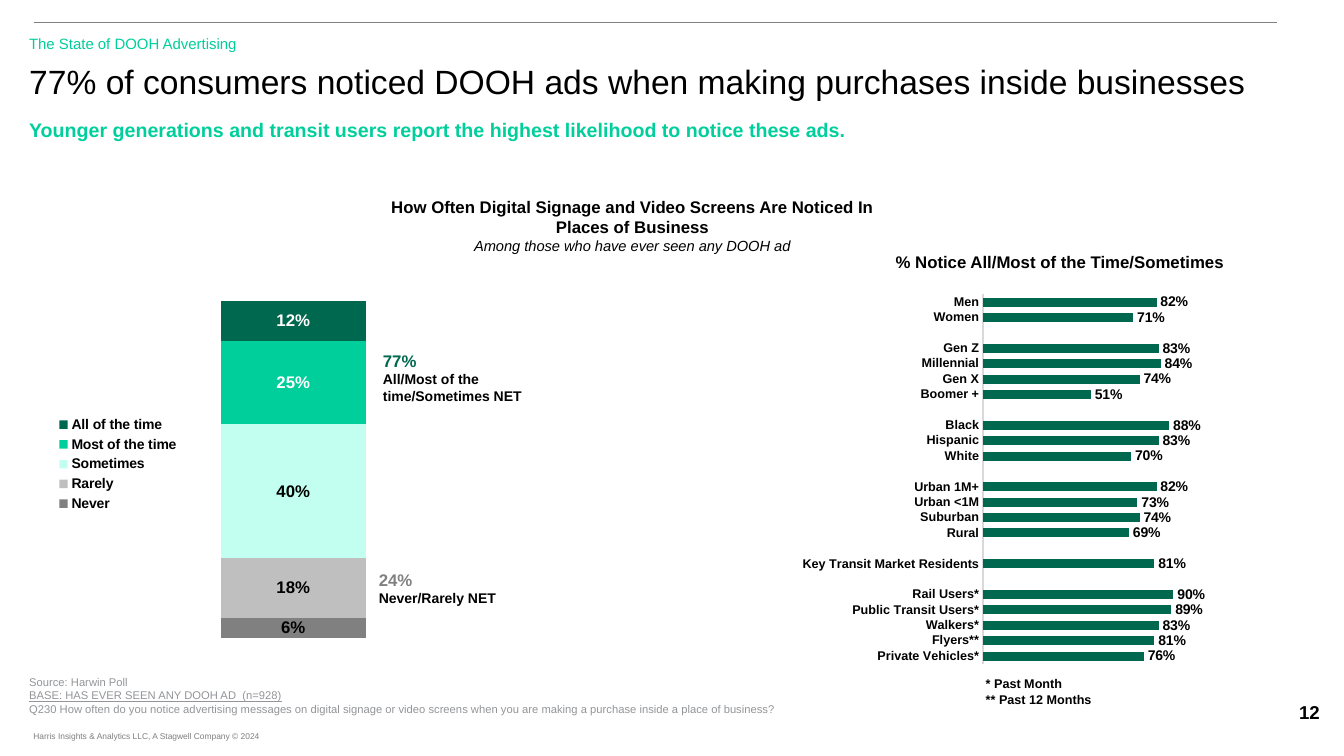
import pptx
import pptx.chart.data
import pptx.dml.color
import pptx.enum.chart
import pptx.enum.shapes
import pptx.enum.text
import pptx.oxml
import pptx.oxml.ns
import pptx.util
from lxml import etree

Pt = pptx.util.Pt
ALIGN = pptx.enum.text.PP_ALIGN
ANCHOR = pptx.enum.text.MSO_ANCHOR
CHART = pptx.enum.chart.XL_CHART_TYPE
LABEL = pptx.enum.chart.XL_LABEL_POSITION

BLACK, WHITE, GREY = "000000", "FFFFFF", "808080"
GREEN, DARK_GREEN, PALE_GREEN = "00CF9C", "00684E", "C2FFF0"
SOURCE_GREY = "939598"

FREQUENCIES = [
    ("Never", 0.06, GREY, BLACK),
    ("Rarely", 0.18, "BFBFBF", BLACK),
    ("Sometimes", 0.40, PALE_GREEN, BLACK),
    ("Most of the time", 0.25, GREEN, WHITE),
    ("All of the time", 0.12, DARK_GREEN, WHITE),
]

AUDIENCE_GROUPS = [
    [("Private Vehicles*", 0.76), ("Flyers**", 0.81), ("Walkers*", 0.83),
     ("Public Transit Users*", 0.89), ("Rail Users*", 0.90)],
    [("Key Transit Market Residents", 0.81)],
    [("Rural", 0.69), ("Suburban", 0.74), ("Urban <1M", 0.73), ("Urban 1M+", 0.82)],
    [("White", 0.70), ("Hispanic", 0.83), ("Black", 0.88)],
    [("Boomer +", 0.51), ("Gen X", 0.74), ("Millennial", 0.84), ("Gen Z", 0.83)],
    [("Women", 0.71), ("Men", 0.82)],
]


def color(hex_string):
    return pptx.dml.color.RGBColor.from_string(hex_string)


class SlideBuilder:
    font_name = "Arial"

    def __init__(self, slide):
        self.slide = slide

    def style(self, font, size, hex_string=BLACK, bold=False, italic=False, underline=False):
        font.name = self.font_name
        font.size = Pt(size)
        font.color.rgb = color(hex_string)
        font.bold = bold
        font.italic = italic
        font.underline = underline

    def title(self, text, left, top, width, height, size):
        shape = self.slide.shapes.title
        shape.left, shape.top, shape.width, shape.height = map(Pt, (left, top, width, height))
        frame = shape.text_frame
        frame.text = text
        frame.auto_size = pptx.enum.text.MSO_AUTO_SIZE.NONE
        frame.vertical_anchor = ANCHOR.MIDDLE
        frame.paragraphs[0].alignment = ALIGN.LEFT
        self.style(frame.paragraphs[0].font, size)

    def text(self, left, top, width, height, lines, align=ALIGN.LEFT, wrap=True, inset=7.2):
        shape = self.slide.shapes.add_textbox(*map(Pt, (left, top, width, height)))
        frame = shape.text_frame
        frame.word_wrap = wrap
        frame.margin_left = Pt(inset)
        for index, (words, font_style) in enumerate(lines):
            paragraph = frame.add_paragraph() if index else frame.paragraphs[0]
            paragraph.text = words
            paragraph.alignment = align
            self.style(paragraph.font, **font_style)

    def rule(self, left, top, right, hex_string, width):
        line = self.slide.shapes.add_connector(
            pptx.enum.shapes.MSO_CONNECTOR.STRAIGHT, Pt(left), Pt(top), Pt(right), Pt(top))
        line.line.color.rgb = color(hex_string)
        line.line.width = Pt(width)
        etree.SubElement(line._element.spPr, pptx.oxml.ns.qn("a:effectLst"))

    def chart(self, kind, left, top, width, height, categories, series, plot_area, gap,
              label_size, label_position):
        data = pptx.chart.data.CategoryChartData(number_format="0%")
        data.categories = categories
        for name, values, _, _ in series:
            data.add_series(name, values)
        frame = self.slide.shapes.add_chart(kind, *map(Pt, (left, top, width, height)), data)
        chart = frame.chart
        chart.has_title = False
        chart.has_legend = False
        self.style(chart.font, 12, bold=True)
        plot = chart.plots[0]
        plot.gap_width = gap
        plot.vary_by_categories = False
        for item, (_, _, fill, label_color) in zip(plot.series, series):
            item.format.fill.solid()
            item.format.fill.fore_color.rgb = color(fill)
            labels = item.data_labels
            labels.show_value = True
            labels.number_format = "0%"
            labels.number_format_is_linked = False
            labels.position = label_position
            self.style(labels.font, label_size, label_color, bold=True)
        chart.value_axis.visible = False
        chart.value_axis.has_major_gridlines = False
        self.place_plot(chart, plot_area)
        return chart

    def place_plot(self, chart, plot_area):
        area = chart._chartSpace.chart.plotArea
        for layout in area.findall(pptx.oxml.ns.qn("c:layout")):
            area.remove(layout)
        settings = [("layoutTarget", "inner"), ("xMode", "edge"), ("yMode", "edge")]
        settings += zip("xywh", plot_area)
        children = "".join(f'<c:{tag} val="{value}"/>' for tag, value in settings)
        area.insert(0, pptx.oxml.parse_xml(
            f'<c:layout {pptx.oxml.ns.nsdecls("c")}>'
            f'<c:manualLayout>{children}</c:manualLayout></c:layout>'))

    def frequency_chart(self):
        series = [(name, [share], fill, label) for name, share, fill, label in FREQUENCIES]
        chart = self.chart(CHART.COLUMN_STACKED_100, 33.1, 154.8, 369.4, 353.5, ["1"], series,
                           (0.197, 0.102, 0.561, 0.818), 100, 12, LABEL.CENTER)
        chart.plots[0].overlap = 100
        chart.value_axis.maximum_scale = 1.1
        chart.category_axis.visible = False
        chart.category_axis.reverse_order = True
        chart.has_legend = True
        chart.legend.position = pptx.enum.chart.XL_LEGEND_POSITION.LEFT
        chart.legend.include_in_layout = False
        self.style(chart.legend.font, 10, bold=True)

    def audience_chart(self):
        rows = []
        for group in AUDIENCE_GROUPS:
            rows += ([("", None)] if rows else []) + group
        categories, values = zip(*rows)
        chart = self.chart(CHART.BAR_CLUSTERED, 558, 199.4, 307.4, 282.2, categories,
                           [("Series 1", values, DARK_GREEN, BLACK)],
                           (0.469, 0.039, 0.492, 0.935), 70, 10, LABEL.OUTSIDE_END)
        chart.value_axis.minimum_scale = 0
        chart.value_axis.maximum_scale = 1
        axis = chart.category_axis
        axis.major_tick_mark = pptx.enum.chart.XL_TICK_MARK.NONE
        axis.format.line.color.rgb = color("D9D9D9")
        axis.format.line.width = Pt(0.75)
        self.style(axis.tick_labels.font, 9, bold=True)


def main():
    presentation = pptx.Presentation()
    presentation.slide_width, presentation.slide_height = Pt(960), Pt(540)
    slide = presentation.slides.add_slide(presentation.slide_layouts.get_by_name("Title Only"))
    builder = SlideBuilder(slide)

    heading = dict(size=12, bold=True)
    net_label = dict(size=10, bold=True)
    footnote = dict(size=9, bold=True)
    source = dict(size=8, hex_string=SOURCE_GREY)

    builder.rule(24.5, 15.8, 912.2, GREY, 0.5)
    builder.text(13.7, 20.9, 480, 20.2,
                 [("The State of DOOH Advertising", dict(size=10.7, hex_string=GREEN))])
    builder.title("77% of consumers noticed DOOH ads when making purchases inside businesses",
                  13.7, 41, 915, 33.8, 24)
    builder.text(13.7, 80.6, 898, 29.5, [
        ("Younger generations and transit users report the highest likelihood to notice these ads.",
         dict(size=14, hex_string=GREEN, bold=True))])

    builder.text(266.4, 136.8, 370.8, 51, [
        ("How Often Digital Signage and Video Screens Are Noticed In Places of Business", heading),
        ("Among those who have ever seen any DOOH ad", dict(size=10.5, italic=True))], ALIGN.CENTER)
    builder.text(622.8, 176.4, 268.6, 21.6,
                 [("% Notice All/Most of the Time/Sometimes", heading)], ALIGN.CENTER)

    builder.frequency_chart()
    builder.text(266.4, 247, 154, 46, [
        ("77%", dict(heading, hex_string=DARK_GREEN)),
        ("All/Most of the time/Sometimes NET", net_label)])
    builder.text(263.5, 403.2, 154, 33.8, [
        ("24%", dict(heading, hex_string=GREY)),
        ("Never/Rarely NET", net_label)])

    builder.audience_chart()
    builder.text(697, 479.5, 146, 28.8,
                 [("* Past Month", footnote), ("** Past 12 Months", footnote)])

    builder.text(13.7, 478.8, 728.6, 36, [
        ("Source: Harwin Poll", source),
        ("BASE: HAS EVER SEEN ANY DOOH AD  (n=928)", dict(source, underline=True)),
        ("Q230 How often do you notice advertising messages on digital signage or video screens "
         "when you are making a purchase inside a place of business?", source)])
    builder.text(23.8, 518.4, 172, 14.4,
                 [("Harris Insights & Analytics LLC, A Stagwell Company © 2024",
                   dict(size=6, hex_string="7F7F7F"))], wrap=False, inset=0)
    builder.text(898.6, 496.8, 73.4, 23.8, [("12", dict(size=13.3, bold=True))], ALIGN.CENTER)

    presentation.save("out.pptx")


if __name__ == "__main__":
    main()
